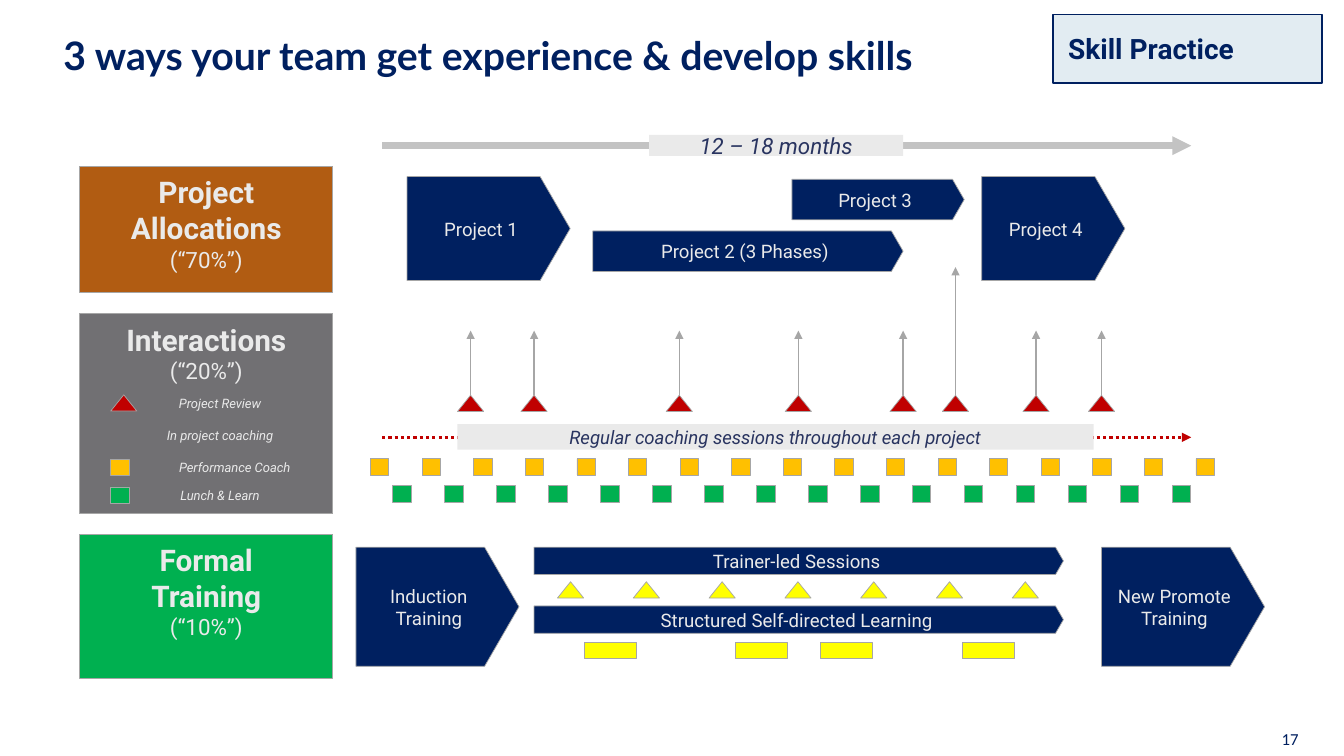
from lxml.etree import SubElement as Sub
from pptx import Presentation
from pptx.dml.color import RGBColor as RGB
from pptx.enum.dml import MSO_LINE as Dash
from pptx.enum.shapes import MSO_CONNECTOR as Conn, MSO_SHAPE as Kind
from pptx.enum.text import MSO_ANCHOR as Anchor, MSO_AUTO_SIZE as Auto, PP_ALIGN as Align
from pptx.oxml.ns import qn
from pptx.util import Cm, Pt

NAVY = RGB(0x00, 0x20, 0x60)
INK = RGB(0x29, 0x34, 0x60)
PALE = RGB(0xEA, 0xEA, 0xEA)
ICE = RGB(0xE2, 0xEC, 0xF2)
EDGE = RGB(0xA6, 0xA6, 0xA6)
SILVER = RGB(0xC3, 0xC3, 0xC3)
GREY = RGB(0x71, 0x70, 0x73)
BROWN = RGB(0xB1, 0x5C, 0x12)
GREEN = RGB(0x00, 0xB0, 0x50)
AMBER = RGB(0xFF, 0xC0, 0x00)
YELLOW = RGB(0xFF, 0xFF, 0x00)
RED = RGB(0xC0, 0x00, 0x00)

MARK_W, MARK_H = 0.66, 0.41
DOT_W = 0.46


def write(shape, text, size=13.3, color=PALE, font="Roboto", bold=False, ital=False,
          align=Align.CENTER, anchor=Anchor.MIDDLE, pad=(0.13, 0.13, 0.13, 0.13),
          before=None, space=None, wrap=True):
    frame = shape.text_frame
    frame.word_wrap = wrap
    frame.auto_size = Auto.NONE
    frame.vertical_anchor = anchor
    (frame.margin_left, frame.margin_top,
     frame.margin_right, frame.margin_bottom) = map(Cm, pad)
    for num, part in enumerate(text.split("\n")):
        para = frame.add_paragraph() if num else frame.paragraphs[-1]
        para.alignment = align
        if before is not None:
            para.space_before = Pt(before)
        if space is not None:
            para.line_spacing = space
        for row, bit in enumerate(part.split("\v")):
            if row:
                para.add_line_break()
            if bit:
                run = para.add_run()
                run.text = bit
                face = run.font
                face.name, face.size = font, Pt(size)
                face.bold, face.italic = bold, ital
                face.color.rgb = color


def draw(slide, kind, x, y, w, h, fill, edge=EDGE, width=0.5):
    shape = slide.shapes.add_shape(kind, Cm(x), Cm(y), Cm(w), Cm(h))
    shape.shadow.inherit = False
    shape.fill.solid()
    shape.fill.fore_color.rgb = fill
    if edge is None:
        shape.line.fill.background()
    else:
        shape.line.color.rgb = edge
        shape.line.width = Pt(width)
    return shape


def label(slide, text, x, y, w, h, **form):
    write(slide.shapes.add_textbox(Cm(x), Cm(y), Cm(w), Cm(h)), text, **form)


def plate(slide, text, x, y, w, h):
    shape = draw(slide, Kind.PENTAGON, x, y, w, h, NAVY)
    shape.adjustments[0] = 0.289
    write(shape, text)


def band(slide, text, x, y, w, h, size):
    shape = draw(slide, Kind.RECTANGLE, x, y, w, h, PALE, None)
    write(shape, text, size=size, color=INK, ital=True, before=8,
          pad=(0.25, 0.13, 0.25, 0.13))


def arrow(slide, x, y, right, low, color, width, tip="tailEnd", dash=None):
    line = slide.shapes.add_connector(Conn.STRAIGHT, Cm(x), Cm(y), Cm(right), Cm(low))
    line.line.color.rgb = color
    line.line.width = Pt(width)
    if dash is not None:
        line.line.dash_style = dash
    props = line.element.spPr
    Sub(props.find(qn("a:ln")), qn("a:" + tip), type="triangle")
    Sub(props, qn("a:effectLst"))
    return line


def head(slide, x, y, w, h):
    title = slide.shapes.title
    title.left, title.top, title.width, title.height = map(Cm, (x, y, w, h))
    write(title, "3 ways your team get experience & develop skills", size=28,
          color=NAVY, font="Lato", bold=True, align=Align.LEFT, space=0.9,
          pad=(0.25, 0.13, 0.25, 0.13))


def badge(slide, x, y, w, h):
    draw(slide, Kind.FLOWCHART_PROCESS, x, y, w, h, ICE, NAVY, 1)
    label(slide, "Skill Practice", x + 0.13, y + 0.3, w - 1.4, 1.12, size=20,
          color=NAVY, bold=True, align=Align.LEFT, anchor=Anchor.TOP,
          pad=(0.25, 0.13, 0.25, 0.13))


def card(slide, name, share, fill, x, y, w, h):
    shape = draw(slide, Kind.RECTANGLE, x, y, w, h, fill)
    form = dict(anchor=Anchor.TOP, pad=(0.13, 0.2, 0.13, 0.13))
    write(shape, name + "\v", size=21.3, bold=True, **form)
    write(shape, share, size=16, **form)


def legend(slide, x, y, w, h):
    rows = [
        ("Project Review", 0, w, Kind.ISOSCELES_TRIANGLE, MARK_W, RED),
        ("In project coaching", 0.82, w, None, 0, None),
        ("Performance Coach", 1.62, w + 0.74, Kind.RECTANGLE, DOT_W, AMBER),
        ("Lunch & Learn", 2.32, w, Kind.RECTANGLE, DOT_W, GREEN),
    ]
    for text, down, wide, kind, size, fill in rows:
        if kind is not None:
            draw(slide, kind, x, y + down + 0.14, size, MARK_H, fill)
        label(slide, text, x + 0.66, y + down, wide, h, size=9.3, ital=True,
              before=8, pad=(0, 0, 0, 0))


def projects(slide, x, y, w):
    arrow(slide, x, y + 0.27, x + w, y + 0.27, SILVER, 4.5)
    band(slide, "12 – 18 months", x + 6.73, y, 6.4, 0.53, 16)
    for text, left, down, wide, high in [
        ("Project 1", 0.63, 1.05, 4.11, 2.62),
        ("Project 2 (3 Phases)", 5.31, 2.42, 7.82, 1.02),
        ("Project 3", 10.33, 1.12, 4.34, 1.02),
        ("Project 4", 15.11, 1.05, 3.61, 2.62),
    ]:
        plate(slide, text, x + left, y + down, wide, high)


def talks(slide, x, y, w):
    tall = 14.45
    for mid in (2.23, 3.83, 7.49, 10.49, 13.13, tall, 16.48, 18.13):
        mark = draw(slide, Kind.ISOSCELES_TRIANGLE, x + mid - MARK_W / 2, y + 3.23,
                    MARK_W, MARK_H, RED)
        top = y if mid == tall else y + 1.6
        line = arrow(slide, x + mid, top, x + mid, y + 3.23, EDGE, 1, "headEnd")
        line.end_connect(mark, 0)
    arrow(slide, x, y + 4.29, x + w, y + 4.29, RED, 2.25, dash=Dash.ROUND_DOT)
    band(slide, "Regular coaching sessions throughout each project",
         x + 1.9, y + 3.96, 16.03, 0.64, 13.3)
    for count, left, step, down, fill in [
        (17, -0.29, 1.3, 4.83, AMBER),
        (16, 0.27, 1.31, 5.51, GREEN),
    ]:
        for num in range(count):
            draw(slide, Kind.RECTANGLE, x + left + num * step, y + down,
                 DOT_W, MARK_H, fill)


def classes(slide, x, y, w, h):
    wide = 4.11
    plate(slide, "Induction\nTraining", x, y, wide, h)
    plate(slide, "New Promote Training", x + w - wide, y, wide, h)
    plate(slide, "Trainer-led Sessions", x + 4.49, y, 13.34, 0.69)
    plate(slide, "Structured Self-directed Learning", x + 4.49, y + 1.48, 13.34, 0.69)
    for num in range(7):
        draw(slide, Kind.ISOSCELES_TRIANGLE, x + 5.08 + num * 1.91, y + 0.87,
             MARK_W, MARK_H, YELLOW)
    for left in (5.76, 9.57, 11.71, 15.29):
        draw(slide, Kind.RECTANGLE, x + left, y + 2.39, 1.3, MARK_H, YELLOW)


def main():
    deck = Presentation()
    deck.slide_width, deck.slide_height = Cm(33.87), Cm(19.05)
    slide = deck.slides.add_slide(deck.slide_layouts[5])
    head(slide, 1.35, 0.84, 26.95, 1.22)
    badge(slide, 26.54, 0.36, 6.78, 1.73)
    for name, share, fill, top, high in [
        ("Project Allocations", "(“70%”)", BROWN, 4.19, 3.18),
        ("Interactions", "(“20%”)", GREY, 7.9, 5.05),
        ("Formal\vTraining", "(“10%”)", GREEN, 13.46, 3.63),
    ]:
        card(slide, name, share, fill, 2.01, top, 6.38, high)
    legend(slide, 2.79, 9.81, 4.19, 0.7)
    projects(slide, 9.63, 3.4, 20.39)
    talks(slide, 9.63, 6.73, 20.39)
    classes(slide, 8.97, 13.79, 22.9, 3)
    label(slide, "17", 32.3, 18.36, 0.46, 0.51, size=12, color=NAVY, font="Calibri",
          align=Align.LEFT, anchor=Anchor.TOP, pad=(0, 0, 0, 0), wrap=False)
    deck.save("out.pptx")


if __name__ == "__main__":
    main()
